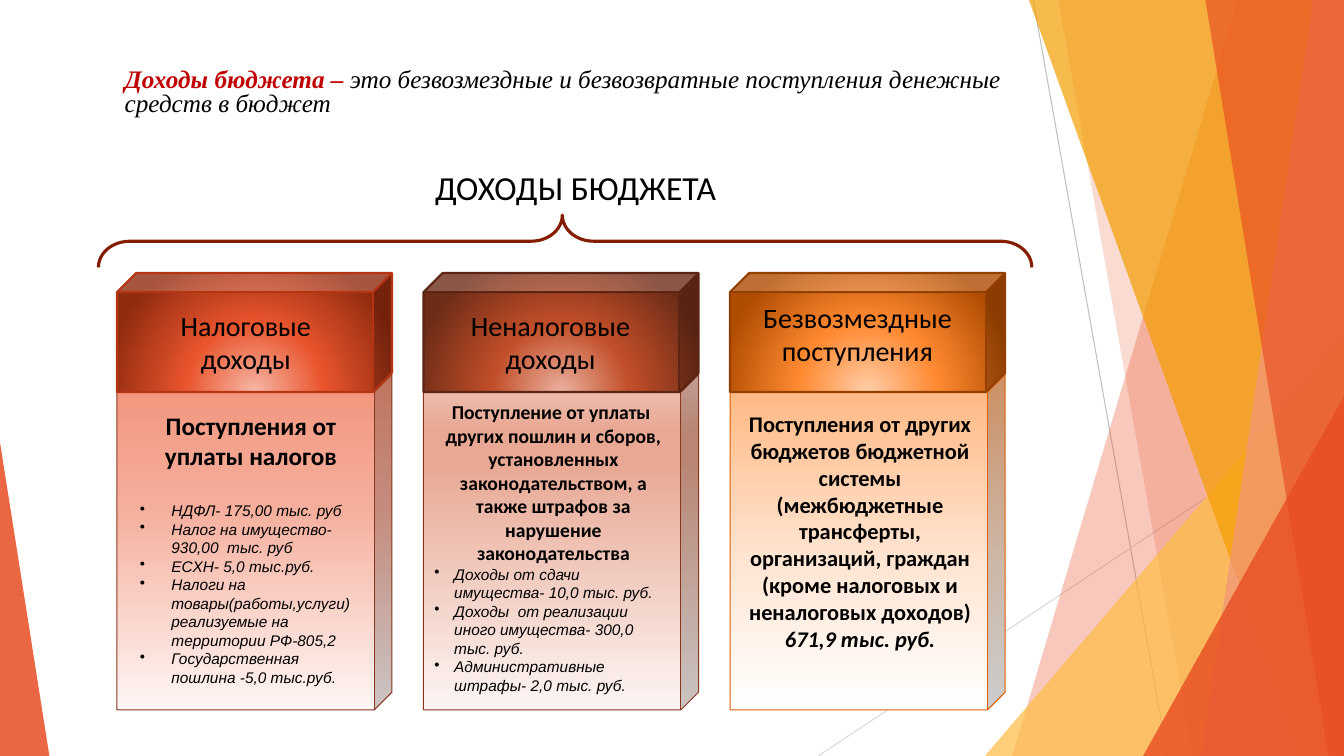
from dataclasses import dataclass
from lxml.etree import SubElement
from pptx import Presentation
from pptx.dml.color import RGBColor
from pptx.enum.shapes import MSO_CONNECTOR, MSO_SHAPE
from pptx.enum.text import MSO_AUTO_SIZE, PP_ALIGN
from pptx.oxml.ns import qn
from pptx.util import Pt


@dataclass(frozen=True)
class Theme:
    ink: str = "000000"
    term: str = "C00000"
    brace: str = "851D00"
    red: str = "E84C22"
    salmon: str = "F1947A"
    yellow: str = "FFBD47"
    amber: str = "F49D00"
    rays: tuple = ("BFBFBF", "D9D9D9")
    sans: str = "Calibri"
    serif: str = "Times New Roman"
    list_font: str = "Arial"
    heading: int = 24
    column_head: int = 20
    definition: int = 18
    item: int = 11


T = Theme()


@dataclass(frozen=True)
class Column:
    head: str
    head_box: tuple  # left, top, width relative to the column
    head_stops: tuple
    head_line: str
    text: str
    text_size: int
    text_box: tuple
    body_stops: tuple
    body_line: str
    items: tuple = ()
    indent: float = 0
    gap: float = 0
    total: str = ""


COLUMNS = (
    Column("Налоговые доходы", (19.4, 21.7, 145.4),
           ((0, "F6B7A7"), (46, "E9552D"), (100, "912B0F")), "B53513",
           "Поступления от уплаты налогов", 18, (9.4, 94.4, 172.8),
           ((0, "FEF6F4"), (61, "F5AE9C"), (100, "F1947A")), "88371D",
           ("НДФЛ- 175,00 тыс. руб",
            "Налог на имущество- 930,00  тыс. руб",
            "ЕСХН- 5,0 тыс.руб.",
            "Налоги на товары(работы,услуги) реализуемые на территории РФ-805,2",
            "Государственная пошлина -5,0 тыс.руб."), indent=22.5, gap=22),
    Column("Неналоговые доходы", (18, 21.7, 145.4),
           ((0, "EBB19F"), (46, "C24E29"), (100, "6D2C17")), "5B2413",
           "Поступление от уплаты  других пошлин и сборов, установленных "
           "законодательством, а также штрафов за нарушение законодательства",
           14, (0.7, 87.2, 184.3),
           ((0, "FCF5F3"), (74, "E8A893"), (83, "E8A893"), (100, "F0C5B7")), "88371D",
           ("Доходы от сдачи имущества- 10,0 тыс. руб.",
            "Доходы  от реализации иного имущества- 300,0 тыс. руб.",
            "Административные штрафы- 2,0 тыс. руб."), indent=14.2),
    Column("Безвозмездные поступления", (11.5, 16, 159),
           ((0, "FFCEA9"), (46, "FF8A32"), (100, "B04C00")), "933F00",
           "Поступления от других бюджетов бюджетной системы (межбюджетные "
           "трансферты, организаций, граждан (кроме налоговых и неналоговых доходов)",
           16, (1.4, 94.4, 182.9),
           ((0, "FFFFFF"), (43, "FFE6D4"), (100, "FFB57D")), "DC5F00",
           total="671,9 тыс. руб."),
)


def rgb(value):
    return RGBColor.from_string(value)


def add_line(s, start, end, color):
    line = s.shapes.add_connector(MSO_CONNECTOR.STRAIGHT, *map(Pt, start + end))
    line.line.color.rgb = rgb(color)
    line.line.width = Pt(0.75)
    SubElement(line._element.spPr, qn("a:effectLst"))


def add_facet(s, points, color, opacity):
    """Draw a borderless translucent polygon."""
    builder = s.shapes.build_freeform(Pt(points[0][0]), Pt(points[0][1]))
    builder.add_line_segments([(Pt(x), Pt(y)) for x, y in points[1:]], close=True)
    sp = builder.convert_to_shape()
    sp.shadow.inherit = False
    sp.line.fill.background()
    sp.fill.solid()
    sp.fill.fore_color.rgb = rgb(color)
    clr = sp._element.spPr.find(qn("a:solidFill"))[0]
    SubElement(clr, qn("a:alpha"), val=str(opacity * 1000))


def add_cube(s, box, depth, stops, line, width, radial=False):
    sp = s.shapes.add_shape(MSO_SHAPE.CUBE, *map(Pt, box))
    sp.adjustments[0] = depth
    sp.shadow.inherit = False
    sp.line.color.rgb = rgb(line)
    sp.line.width = Pt(width)
    sp.fill.gradient()
    grad = sp._element.spPr.find(qn("a:gradFill"))
    for child in list(grad):
        grad.remove(child)
    stop_list = SubElement(grad, qn("a:gsLst"))
    for pos, color in stops:
        stop = SubElement(stop_list, qn("a:gs"), pos=str(pos * 1000))
        SubElement(stop, qn("a:srgbClr"), val=color)
    if radial:
        shade = SubElement(grad, qn("a:path"), {"path": "circle"})
        SubElement(shade, qn("a:fillToRect"), l="50000", t="130000", r="50000", b="-30000")
    else:
        SubElement(grad, qn("a:lin"), ang="16200000", scaled="0")


def add_text(s, box):
    tf = s.shapes.add_textbox(*map(Pt, box)).text_frame
    tf.word_wrap = True
    tf.auto_size = MSO_AUTO_SIZE.SHAPE_TO_FIT_TEXT
    return tf


def style(p, size, name, bold=False, italic=False, align=PP_ALIGN.CENTER):
    p.alignment = align
    f = p.font
    f.size, f.name, f.bold, f.italic = Pt(size), name, bold, italic
    f.color.rgb = rgb(T.ink)


def set_indent(p, left, first=0, bullet=None):
    pPr = p._p.get_or_add_pPr()
    pPr.set("marL", str(Pt(left)))
    pPr.set("indent", str(Pt(first)))
    if bullet:
        mark = pPr.makeelement(qn("a:buChar"), {"char": bullet})
        pPr.insert_element_before(mark, "a:tabLst", "a:defRPr", "a:extLst")


def add_backdrop(s, left, top, width, height):
    right, bottom = left + width, top + height
    add_line(s, (left + 738, top), (left + 834, bottom), T.rays[0])
    add_line(s, (right, top + 290), (left + 584.5, bottom), T.rays[1])

    def band(upper, lower, color, opacity):
        add_facet(s, [(left + upper, top), (right, top), (right, bottom),
                      (left + lower, bottom)], color, opacity)

    def wedge(edge, inner, peak, color, opacity):
        add_facet(s, [(edge, peak), (edge, bottom), (inner, bottom)], color, opacity)

    band(884, 723, T.red, 30)
    band(756, 852, T.red, 20)
    wedge(right, left + 703.5, top + 240, T.yellow, 72)
    band(735, 929.5, T.amber, 70)
    band(938, 858, T.salmon, 70)
    band(861, 949, T.red, 65)
    wedge(right, left + 816.5, top + 283, T.red, 80)
    wedge(left, left + 35.3, top + 316, T.red, 85)


def add_definition(s, *box):
    p = add_text(s, box).paragraphs[0]
    style(p, T.definition, T.serif, italic=True, align=PP_ALIGN.LEFT)
    p.line_spacing = 0.8
    set_indent(p, 36)
    r = p.add_run()
    r.text = "Доходы бюджета – "
    r.font.bold = True
    r.font.color.rgb = rgb(T.term)
    p.add_run().text = ("это безвозмездные и безвозвратные поступления денежные "
                        "средств в бюджет")


def add_heading(s, left, top, width, height):
    """Place the heading and the brace that spans the columns."""
    p = add_text(s, (left + 180.3, top, 285, 37.4)).paragraphs[0]
    p.text = "ДОХОДЫ БЮДЖЕТА"
    style(p, T.heading, T.sans)
    p.line_spacing = 1.15
    set_indent(p, 36)
    thick = 37.4
    middle = top + height - thick / 2
    sp = s.shapes.add_shape(MSO_SHAPE.LEFT_BRACE, Pt(left + (width - thick) / 2),
                            Pt(middle - width / 2), Pt(thick), Pt(width))
    sp.rotation = 90
    sp.adjustments[0], sp.adjustments[1] = 0.596, 0.503
    sp.shadow.inherit = False
    sp.fill.background()
    sp.line.color.rgb = rgb(T.brace)
    sp.line.width = Pt(2.25)


def add_column(s, col, left, top, width, height):
    add_cube(s, (left, top + 72.5, width, height - 72.5), 0.064,
             col.body_stops, col.body_line, 0.75)
    add_cube(s, (left, top, width, 85), 0.161, col.head_stops, col.head_line, 1.5, radial=True)
    x, y, w = col.head_box
    p = add_text(s, (left + x, top + y, w, 55.4)).paragraphs[0]
    p.text = col.head
    style(p, T.column_head, T.sans)
    x, y, w = col.text_box
    tf = add_text(s, (left + x, top + y, w, height - y))
    p = tf.paragraphs[0]
    p.text = col.text
    style(p, col.text_size, T.sans, bold=True)
    for i, item in enumerate(col.items):
        p = tf.add_paragraph()
        p.text = item
        style(p, T.item, T.list_font, italic=True, align=PP_ALIGN.LEFT)
        set_indent(p, col.indent, -col.indent, "•")
        if i == 0:
            p.space_before = Pt(col.gap)
    if col.total:
        p = tf.add_paragraph()
        p.text = col.total
        style(p, col.text_size, T.sans, bold=True, italic=True)


def main():
    prs = Presentation()
    prs.slide_width, prs.slide_height = Pt(960), Pt(540)
    s = prs.slides.add_slide(prs.slide_layouts[6])
    add_backdrop(s, 0, 0, 960, 540)
    add_definition(s, 46, 46, 715.7, 42.5)
    add_heading(s, 70.3, 111, 666.7, 80)
    for i, col in enumerate(COLUMNS):
        add_column(s, col, 83.5 + 219 * i, 195, 196.5, 312)
    prs.save("out.pptx")


if __name__ == "__main__":
    main()
